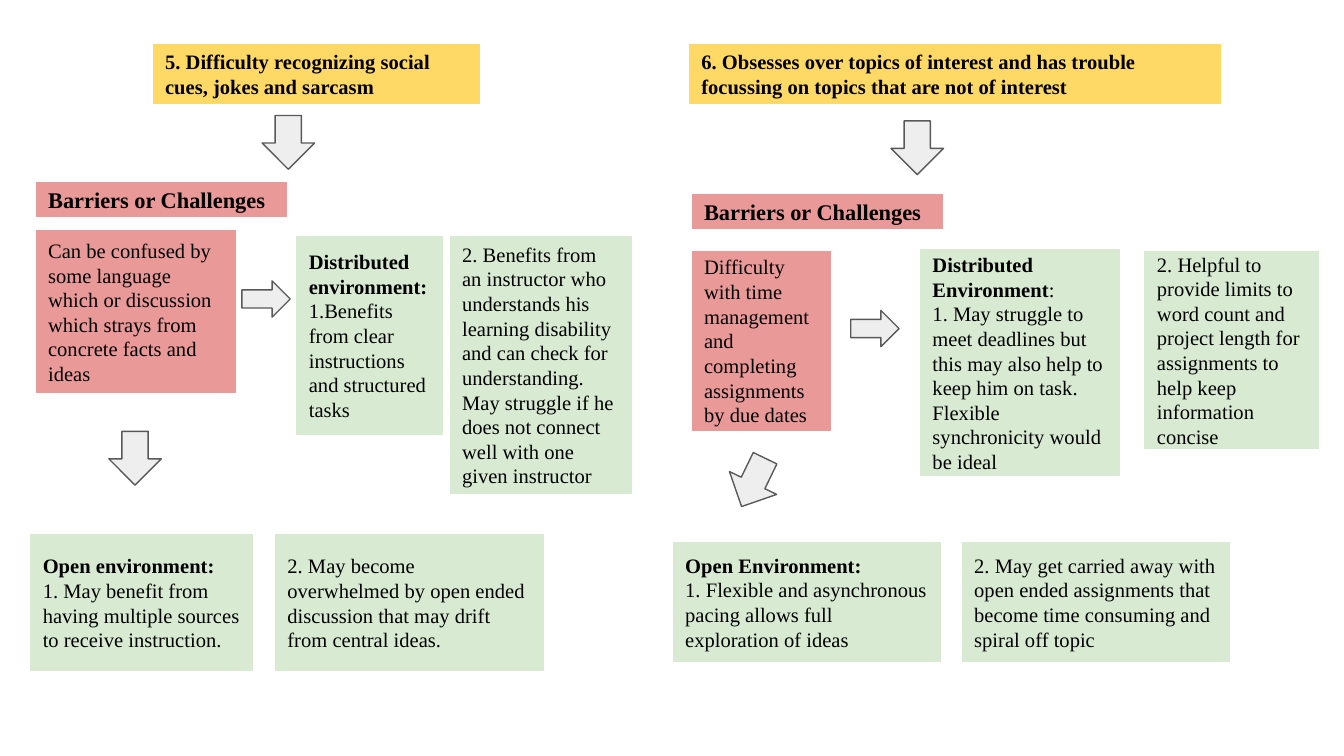
from dataclasses import dataclass

from pptx import Presentation
from pptx import util as u
from pptx.dml import color
from pptx.enum import shapes, text

YELLOW, RED, GREEN = "FFD966", "EA9999", "D9EAD3"
GREY, DARK_GREY, WHITE, BLACK = "EEEEEE", "595959", "FFFFFF", "000000"
DOWN = shapes.MSO_SHAPE.DOWN_ARROW
RIGHT = shapes.MSO_SHAPE.RIGHT_ARROW
ARROW_SIZES = {DOWN: (0.39, 0.4), RIGHT: (0.36, 0.27)}
FRAME_FORMAT = {
    "word_wrap": True,
    "vertical_anchor": text.MSO_ANCHOR.MIDDLE,
    "margin_left": u.Inches(0.1),
    "margin_top": u.Inches(0.1),
    "margin_right": u.Inches(0.1),
    "margin_bottom": u.Inches(0.1),
}


@dataclass
class Box:
    left: float
    top: float
    width: float
    height: float
    fill: str
    body: str = ""
    heading: str = ""
    heading_end: str = ""
    size: int = 11


@dataclass
class Arrow:
    left: float
    top: float
    kind: shapes.MSO_SHAPE = DOWN
    rotation: float = 0


def barriers(left: float, top: float) -> Box:
    return Box(left, top, 1.88, 0.27, RED, heading="Barriers or Challenges", size=12)


BOXES = [
    Box(1.13, 0.32, 2.45, 0.46, YELLOW,
        heading="5. Difficulty recognizing social cues, jokes and sarcasm"),
    Box(5.12, 0.32, 3.97, 0.46, YELLOW,
        heading="6. Obsesses over topics of interest and has trouble "
                "focussing on topics that are not of interest"),
    Box(0.26, 1.71, 1.5, 1.22, RED,
        "Can be confused by some language which or discussion "
        "which strays from concrete facts and ideas"),
    Box(5.14, 1.86, 1.05, 1.35, RED,
        "Difficulty with time management and completing assignments by due dates"),
    Box(6.84, 1.85, 1.5, 1.7, GREEN,
        "1. May struggle to meet deadlines but this may also help to keep him "
        "on task. Flexible synchronicity would be ideal",
        "Distributed Environment", ":"),
    Box(3.34, 1.75, 1.37, 1.93, GREEN,
        "2. Benefits from an instructor who understands his learning disability "
        "and can check for understanding. May struggle if he does not connect "
        "well with one given instructor"),
    Box(2.2, 1.75, 1.1, 1.49, GREEN,
        heading="Distributed environment:",
        heading_end="1.Benefits from clear instructions and structured tasks"),
    Box(8.51, 1.86, 1.31, 1.49, GREEN,
        "2. Helpful to provide limits to word count and project length "
        "for assignments to help keep information concise"),
    barriers(0.26, 1.35),
    barriers(5.14, 1.44),
    Box(0.22, 3.97, 1.67, 1.03, GREEN,
        "1. May benefit from having multiple sources to receive instruction.",
        "Open environment:"),
    Box(5, 4.03, 2.01, 0.9, GREEN,
        "1. Flexible and asynchronous pacing allows full exploration of ideas",
        "Open Environment:"),
    Box(7.15, 4.03, 2.01, 0.9, GREEN,
        "2. May get carried away with open ended assignments "
        "that become time consuming and spiral off topic"),
    Box(2.04, 3.97, 2.01, 1.03, GREEN,
        "2. May become overwhelmed by open ended discussion "
        "that may drift from central ideas."),
]

ARROWS = [
    Arrow(1.95, 0.86),
    Arrow(6.63, 0.9),
    Arrow(5.41, 3.39, rotation=25.9),
    Arrow(1.8, 2.09, RIGHT),
    Arrow(0.81, 3.21),
    Arrow(6.33, 2.31, RIGHT),
]


def rgb(value: str) -> color.RGBColor:
    return color.RGBColor.from_string(value)


def add_filled_shape(slide, kind, bounds: tuple, fill: str, line: str):
    shape = slide.shapes.add_shape(kind, *map(u.Inches, bounds))
    shape.shadow.inherit = False
    shape.fill.solid()
    shape.fill.fore_color.rgb = rgb(fill)
    shape.line.color.rgb = rgb(line)
    shape.line.width = u.Pt(0.75)
    return shape


def add_run(paragraph, content: str, size: int, bold: bool) -> None:
    run = paragraph.add_run()
    run.text = content
    font_format = {"name": "Times New Roman", "size": u.Pt(size), "bold": bold}
    for name, value in font_format.items():
        setattr(run.font, name, value)
    run.font.color.rgb = rgb(BLACK)


def draw_box(slide, box: Box) -> None:
    bounds = (box.left, box.top, box.width, box.height)
    shape = add_filled_shape(slide, shapes.MSO_SHAPE.RECTANGLE, bounds, box.fill, WHITE)
    frame = shape.text_frame
    for name, value in FRAME_FORMAT.items():
        setattr(frame, name, value)
    paragraph = frame.paragraphs[0]
    if box.heading:
        add_run(paragraph, box.heading, box.size, True)
        if box.heading_end:
            add_run(paragraph, box.heading_end, box.size, False)
    if box.body:
        if box.heading:
            paragraph = frame.add_paragraph()
        add_run(paragraph, box.body, box.size, False)
    for paragraph in frame.paragraphs:
        paragraph.alignment = text.PP_ALIGN.LEFT


def draw_arrow(slide, arrow: Arrow) -> None:
    bounds = (arrow.left, arrow.top, *ARROW_SIZES[arrow.kind])
    shape = add_filled_shape(slide, arrow.kind, bounds, GREY, DARK_GREY)
    shape.rotation = arrow.rotation


def main() -> None:
    presentation = Presentation()
    presentation.slide_width = u.Inches(10)
    presentation.slide_height = presentation.slide_width * 9 // 16
    slide = presentation.slides.add_slide(presentation.slide_layouts[6])
    for box in BOXES:
        draw_box(slide, box)
    for arrow in ARROWS:
        draw_arrow(slide, arrow)
    presentation.save("out.pptx")


if __name__ == "__main__":
    main()
